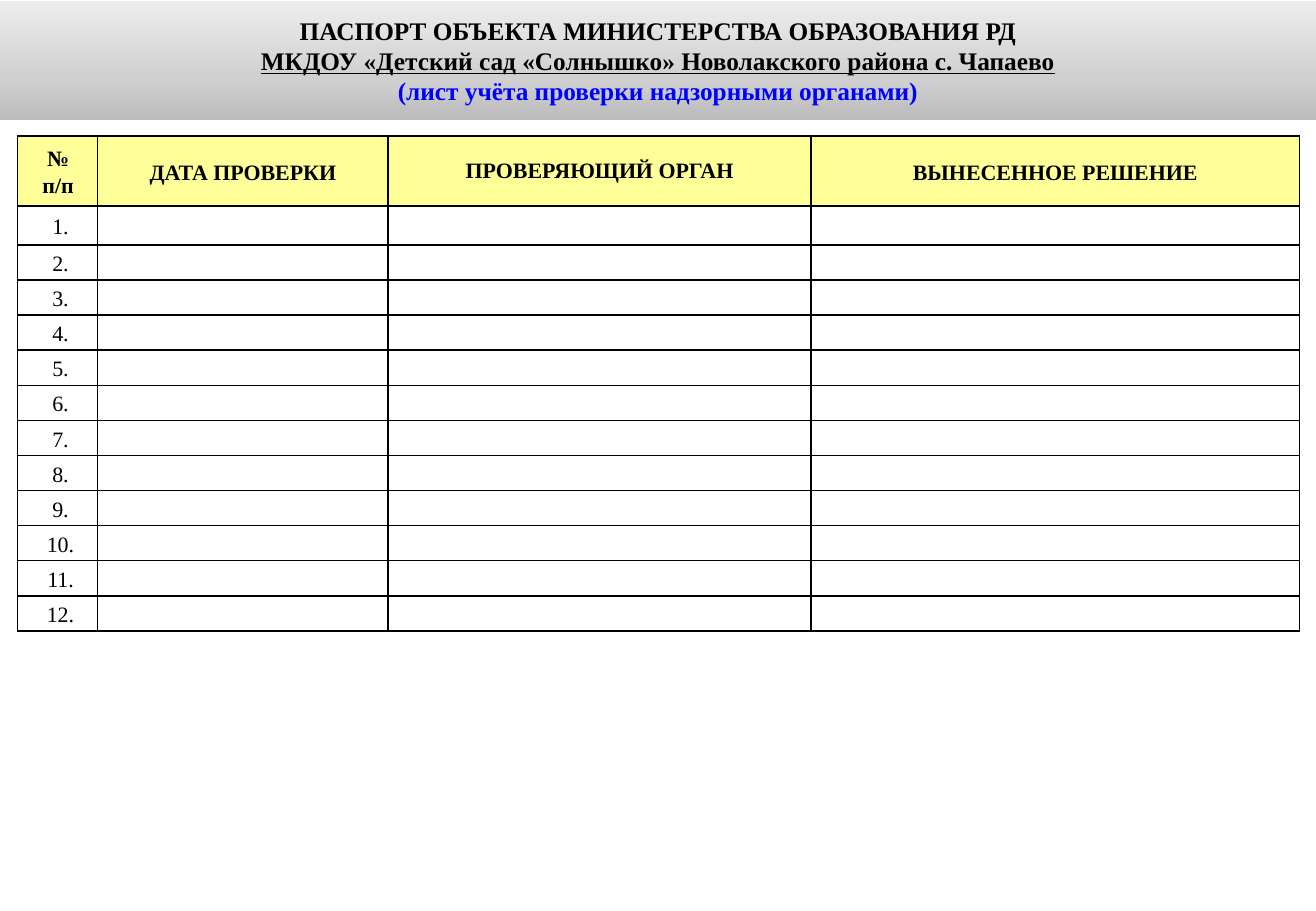
import copy
from dataclasses import dataclass

import pptx
import pptx.dml.color
import pptx.enum.shapes
import pptx.enum.text
import pptx.oxml
import pptx.oxml.ns
import pptx.util

Cm = pptx.util.Cm
Pt = pptx.util.Pt
RGBColor = pptx.dml.color.RGBColor

BLACK = RGBColor(0x00, 0x00, 0x00)
BLUE = RGBColor(0x00, 0x00, 0xFF)
WHITE = RGBColor(0xFF, 0xFF, 0xFF)
YELLOW = RGBColor(0xFF, 0xFF, 0x99)
BANNER_STOPS = (
    (0.0, RGBColor(0xBC, 0xBC, 0xBC)),
    (0.35, RGBColor(0xD0, 0xD0, 0xD0)),
    (1.0, RGBColor(0xED, 0xED, 0xED)),
)

FONT = "Times New Roman"
TABLE_SIZE = Pt(13)
TITLE_SIZE = Pt(15)
PAGE_WIDTH = Cm(27.51)
PAGE_HEIGHT = Cm(19.05)
HEADER_HEIGHT = Cm(1.47)
FIRST_ROW_HEIGHT = Cm(0.81)
OTHER_ROWS_HEIGHT = Cm(8.08)
ENTRY_COUNT = 12


@dataclass(frozen=True)
class TitleLine:
    text: str
    color: RGBColor = BLACK
    underline: bool = False


@dataclass(frozen=True)
class Column:
    heading: str
    width: pptx.util.Length
    indent: pptx.util.Length = Cm(0)
    spacing: float | pptx.util.Length = 1.15


TITLE_LINES = (
    TitleLine("ПАСПОРТ ОБЪЕКТА МИНИСТЕРСТВА ОБРАЗОВАНИЯ РД"),
    TitleLine("МКДОУ «Детский сад «Солнышко» Новолакского района с. Чапаево", underline=True),
    TitleLine("(лист учёта проверки надзорными органами)", color=BLUE),
)

COLUMNS = (
    Column("№\nп/п", Cm(1.68), indent=Cm(0.03)),
    Column("ДАТА ПРОВЕРКИ", Cm(6.07)),
    Column("ПРОВЕРЯЮЩИЙ ОРГАН", Cm(8.84), spacing=Pt(14)),
    Column("ВЫНЕСЕННОЕ РЕШЕНИЕ", Cm(10.21)),
)


def style_span(span, size: pptx.util.Length, color: RGBColor, bold: bool) -> None:
    span.font.name = FONT
    span.font.size = size
    span.font.color.rgb = color
    span.font.bold = bold


def add_borders(cell) -> None:
    properties = cell._tc.get_or_add_tcPr()
    for position, side in enumerate(("lnL", "lnR", "lnT", "lnB")):
        line = pptx.oxml.parse_xml(
            f'<a:{side} {pptx.oxml.ns.nsdecls("a")} w="{Pt(1)}">'
            f'<a:solidFill><a:srgbClr val="{BLACK}"/></a:solidFill></a:{side}>'
        )
        properties.insert(position, line)


def fill_cell(cell, text: str, fill: RGBColor, indent: pptx.util.Length,
              spacing: float | pptx.util.Length, bold: bool) -> None:
    cell.fill.solid()
    cell.fill.fore_color.rgb = fill
    cell.margin_left = cell.margin_right = Cm(0.08)
    cell.margin_top = cell.margin_bottom = 0
    cell.vertical_anchor = pptx.enum.text.MSO_ANCHOR.MIDDLE
    cell.text_frame.text = text
    for para in cell.text_frame.paragraphs:
        para.alignment = pptx.enum.text.PP_ALIGN.CENTER
        para.line_spacing = spacing
        para._p.get_or_add_pPr().set("marL", str(indent))
        for span in para.runs:
            style_span(span, TABLE_SIZE, BLACK, bold)
        if not para.runs:
            size = int(TABLE_SIZE.pt * 100)
            para._p.append(pptx.oxml.parse_xml(
                f'<a:endParaRPr {pptx.oxml.ns.nsdecls("a")} sz="{size}"/>'
            ))
    add_borders(cell)


def add_inspection_table(page) -> None:
    width = sum(column.width for column in COLUMNS)
    height = HEADER_HEIGHT + FIRST_ROW_HEIGHT + OTHER_ROWS_HEIGHT
    table = page.shapes.add_table(
        ENTRY_COUNT + 1, len(COLUMNS), Cm(0.36), Cm(2.84), width, height
    ).table
    table.horz_banding = False

    other_height = OTHER_ROWS_HEIGHT // (ENTRY_COUNT - 1)
    heights = [HEADER_HEIGHT, FIRST_ROW_HEIGHT] + [other_height] * (ENTRY_COUNT - 1)
    for row, row_height in zip(table.rows, heights):
        row.height = row_height

    for index, column in enumerate(COLUMNS):
        table.columns[index].width = column.width
        fill_cell(table.cell(0, index), column.heading, YELLOW,
                  column.indent, column.spacing, bold=True)
        for number in range(1, ENTRY_COUNT + 1):
            text = f"{number}." if index == 0 else ""
            indent = Cm(0.13) if index == 0 else Cm(0)
            fill_cell(table.cell(number, index), text, WHITE, indent, 1.15, bold=False)


def fill_banner(banner) -> None:
    """Fade the banner from dark at the bottom to light at the top."""
    banner.fill.gradient()
    banner.fill.gradient_angle = 90
    stop_list = banner._element.spPr.find(".//" + pptx.oxml.ns.qn("a:gsLst"))
    stop_list.insert(1, copy.deepcopy(stop_list[0]))
    for stop, (position, color) in zip(banner.fill.gradient_stops, BANNER_STOPS):
        stop.position = position
        stop.color.rgb = color


def add_banner(page) -> None:
    banner = page.shapes.add_shape(
        pptx.enum.shapes.MSO_SHAPE.RECTANGLE, 0, Cm(0.02), PAGE_WIDTH, Cm(2.49)
    )
    banner.shadow.inherit = False
    banner.line.fill.background()
    fill_banner(banner)
    frame = banner.text_frame
    frame.word_wrap = True
    frame.vertical_anchor = pptx.enum.text.MSO_ANCHOR.MIDDLE
    frame.text = "\n".join(line.text for line in TITLE_LINES)
    for para, line in zip(frame.paragraphs, TITLE_LINES):
        para.alignment = pptx.enum.text.PP_ALIGN.CENTER
        for span in para.runs:
            style_span(span, TITLE_SIZE, line.color, bold=True)
            span.font.underline = line.underline


def main() -> None:
    deck = pptx.Presentation()
    deck.slide_width = PAGE_WIDTH
    deck.slide_height = PAGE_HEIGHT
    page = deck.slides.add_slide(deck.slide_layouts[6])
    add_inspection_table(page)
    add_banner(page)
    deck.save("out.pptx")


if __name__ == "__main__":
    main()
